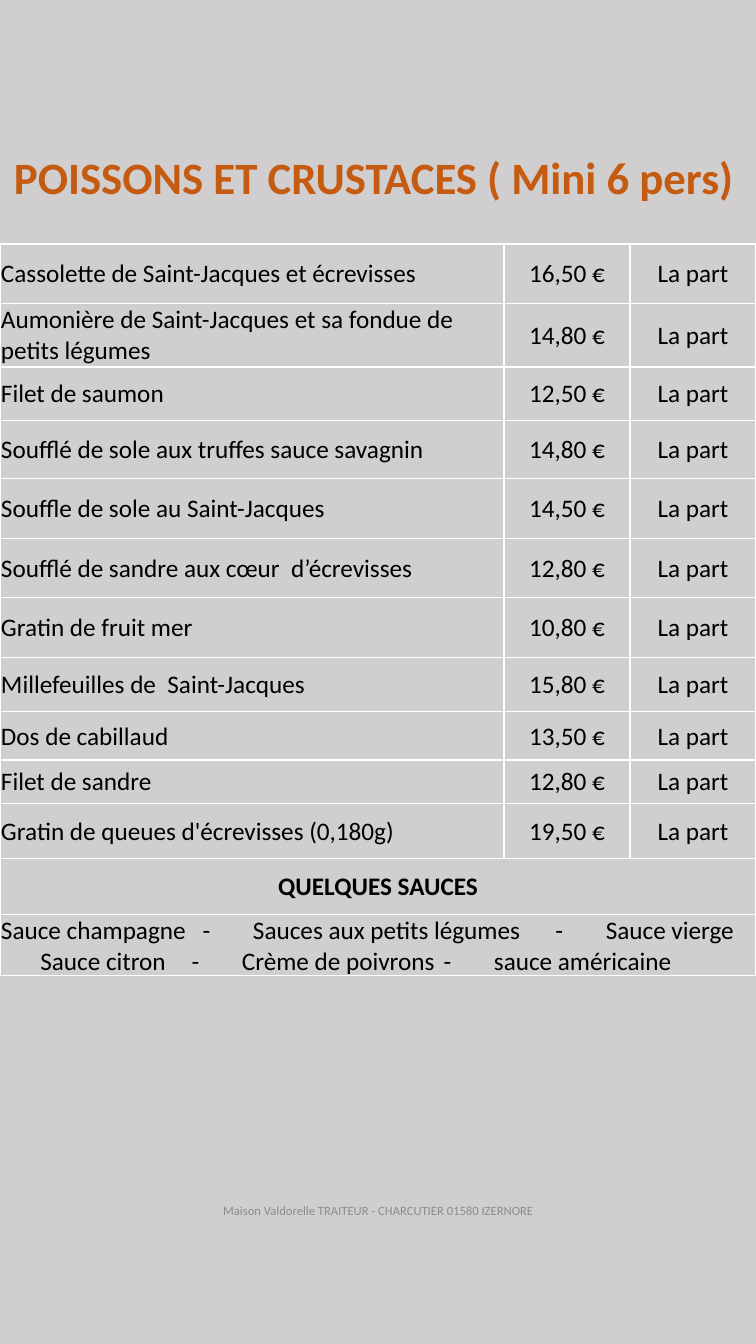
from dataclasses import dataclass

from lxml.etree import SubElement
from pptx import Presentation
from pptx.dml.color import RGBColor as RGB
from pptx.enum.text import MSO_ANCHOR as Anchor, PP_ALIGN as Align
from pptx.oxml.ns import qn
from pptx.util import Inches, Pt


@dataclass(frozen=True)
class Theme:
    font: str = "Calibri"
    ground: str = "D0CECE"
    accent: str = "C55A11"
    ink: str = "000000"
    muted: str = "8C8C8C"
    rule: str = "FFFFFF"
    title: int = 32
    body: int = 18
    small: int = 9


THEME = Theme()
COLS = (5, 1.25, 1.25)
UNIT = "La part"
# dish, price in euros, row height
DISHES = [
    ("Cassolette de Saint-Jacques et écrevisses", "16,50", 0.59),
    ("Aumonière de Saint-Jacques et sa fondue de petits légumes", "14,80", 0.63),
    ("Filet de saumon", "12,50", 0.53),
    ("Soufflé de sole aux truffes sauce savagnin", "14,80", 0.58),
    ("Souffle de sole au Saint-Jacques", "14,50", 0.59),
    ("Soufflé de sandre aux cœur  d’écrevisses", "12,80", 0.59),
    ("Gratin de fruit mer", "10,80", 0.59),
    ("Millefeuilles de  Saint-Jacques", "15,80", 0.54),
    ("Dos de cabillaud", "13,50", 0.48),
    ("Filet de sandre", "12,80", 0.43),
    ("Gratin de queues d'écrevisses (0,180g)", "19,50", 0.55),
]
# sauces on one line, left indent, tab stops
SAUCES = [
    (("Sauce champagne", "Sauces aux petits légumes", "Sauce vierge"),
     0, (2.22, 2.75, 5.73, 5.98)),
    (("Sauce citron", "Crème de poivrons", "sauce américaine"),
     0.39, (1.91, 2.27, 4.47, 4.72)),
]


def style(para, size, color, bold=False, align=Align.LEFT):
    para.alignment = align
    for run in para.runs:
        font = run.font
        font.name, font.size, font.bold = THEME.font, Pt(size), bold
        font.color.rgb = RGB.from_string(color)


def add_label(slide, box, text, size, color, wrap=True, anchor=Anchor.TOP, **look):
    frame = slide.shapes.add_textbox(*map(Inches, box)).text_frame
    frame.word_wrap = wrap
    frame.vertical_anchor = anchor
    frame.text = text
    style(frame.paragraphs[0], size, color, **look)


def add_rules(cell):
    """Draw the four borders; call before the fill, which must follow them."""
    props = cell._tc.get_or_add_tcPr()
    for side in "LRTB":
        line = SubElement(props, qn(f"a:ln{side}"), w=str(Pt(1)))
        fill = SubElement(line, qn("a:solidFill"))
        SubElement(fill, qn("a:srgbClr"), val=THEME.rule)


def dress(cell):
    add_rules(cell)
    cell.fill.solid()
    cell.fill.fore_color.rgb = RGB.from_string(THEME.ground)
    cell.vertical_anchor = Anchor.MIDDLE
    cell.margin_left = cell.margin_right = cell.margin_top = Inches(0.01)
    cell.margin_bottom = 0


def write(cell, text, **look):
    cell.text = text
    style(cell.text_frame.paragraphs[0], THEME.body, THEME.ink, **look)


def set_tabs(para, indent, stops):
    props = para._p.get_or_add_pPr()
    props.set("marL", str(Inches(indent)))
    props.set("indent", "0")
    tabs = SubElement(props, qn("a:tabLst"))
    for stop in stops:
        SubElement(tabs, qn("a:tab"), pos=str(Inches(stop)), algn="l")


def list_sauces(cell):
    cell.text = "\n".join("\t-\t".join(names) for names, _, _ in SAUCES)
    for para, (_, indent, stops) in zip(cell.text_frame.paragraphs, SAUCES):
        style(para, THEME.body, THEME.ink)
        set_tabs(para, indent, stops)


def add_menu(slide, left, top):
    heights = [dish[2] for dish in DISHES] + [0.55, 0.6]
    box = (left, top, sum(COLS), sum(heights))
    table = slide.shapes.add_table(
        len(heights), len(COLS), *map(Inches, box)).table
    table.first_row = table.horz_banding = False
    for col, width in zip(table.columns, COLS):
        col.width = Inches(width)
    for row, height in zip(table.rows, heights):
        row.height = Inches(height)
    for cell in table.iter_cells():
        dress(cell)
    for r, (dish, price, _) in enumerate(DISHES):
        write(table.cell(r, 0), dish)
        write(table.cell(r, 1), f"{price} €", align=Align.CENTER)
        write(table.cell(r, 2), UNIT, align=Align.CENTER)
    head = len(DISHES)
    for r in (head, head + 1):
        table.cell(r, 0).merge(table.cell(r, len(COLS) - 1))
    write(table.cell(head, 0), "QUELQUES SAUCES", bold=True, align=Align.CENTER)
    list_sauces(table.cell(head + 1, 0))


def main():
    deck = Presentation()
    deck.slide_width, deck.slide_height = Inches(7.5), Inches(13.33)
    slide = deck.slides.add_slide(deck.slide_layouts[6])
    ground = slide.background.fill
    ground.solid()
    ground.fore_color.rgb = RGB.from_string(THEME.ground)

    add_label(slide, (2.09, 11.63, 3.32, 0.75),
              "Maison Valdorelle TRAITEUR - CHARCUTIER 01580 IZERNORE",
              THEME.small, THEME.muted, anchor=Anchor.MIDDLE, align=Align.CENTER)
    add_label(slide, (0.04, 1.44, 7.42, 0.64),
              "POISSONS ET CRUSTACES ( Mini 6 pers)",
              THEME.title, THEME.accent, wrap=False, bold=True)
    add_menu(slide, 0, 2.42)
    deck.save("out.pptx")


if __name__ == "__main__":
    main()
